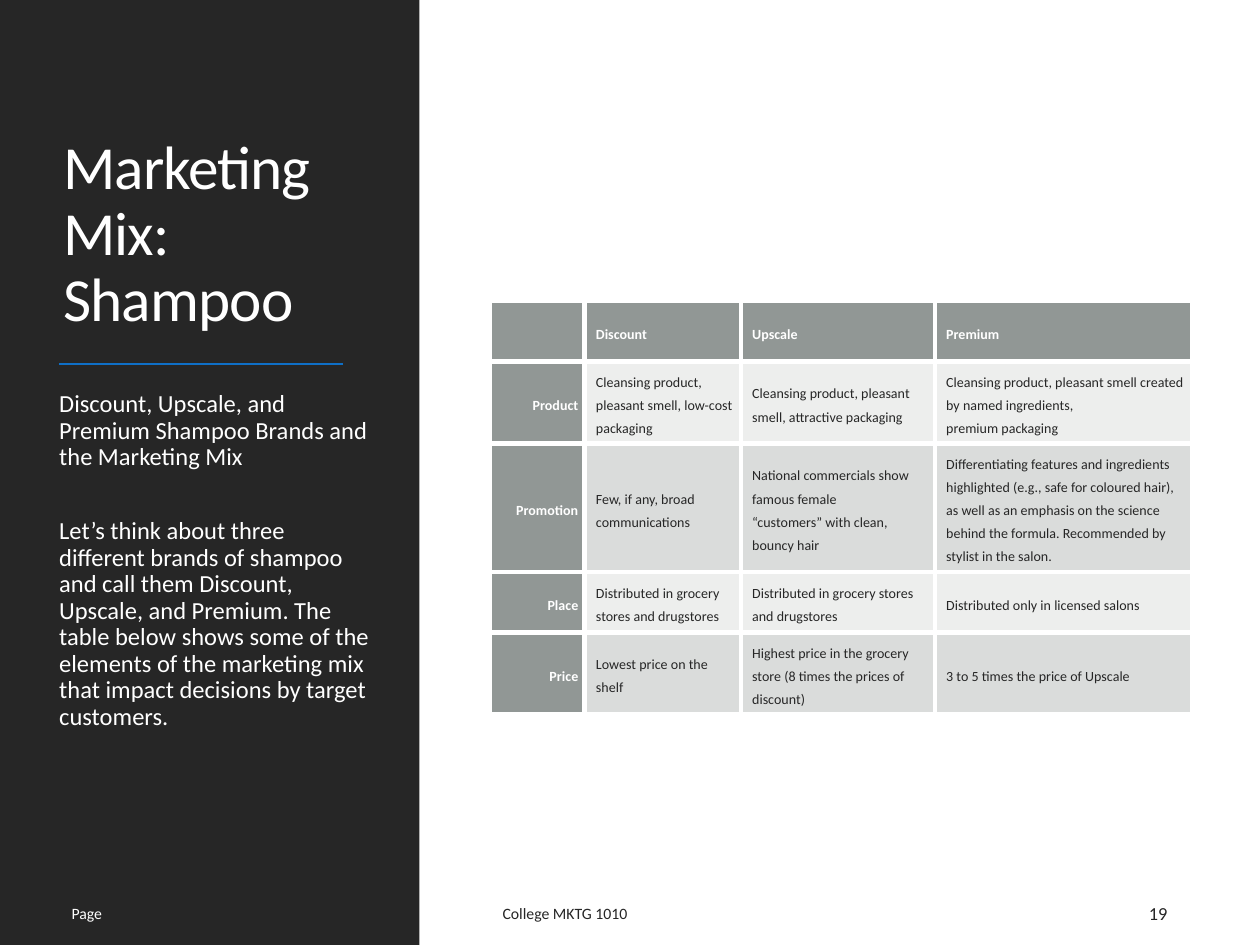
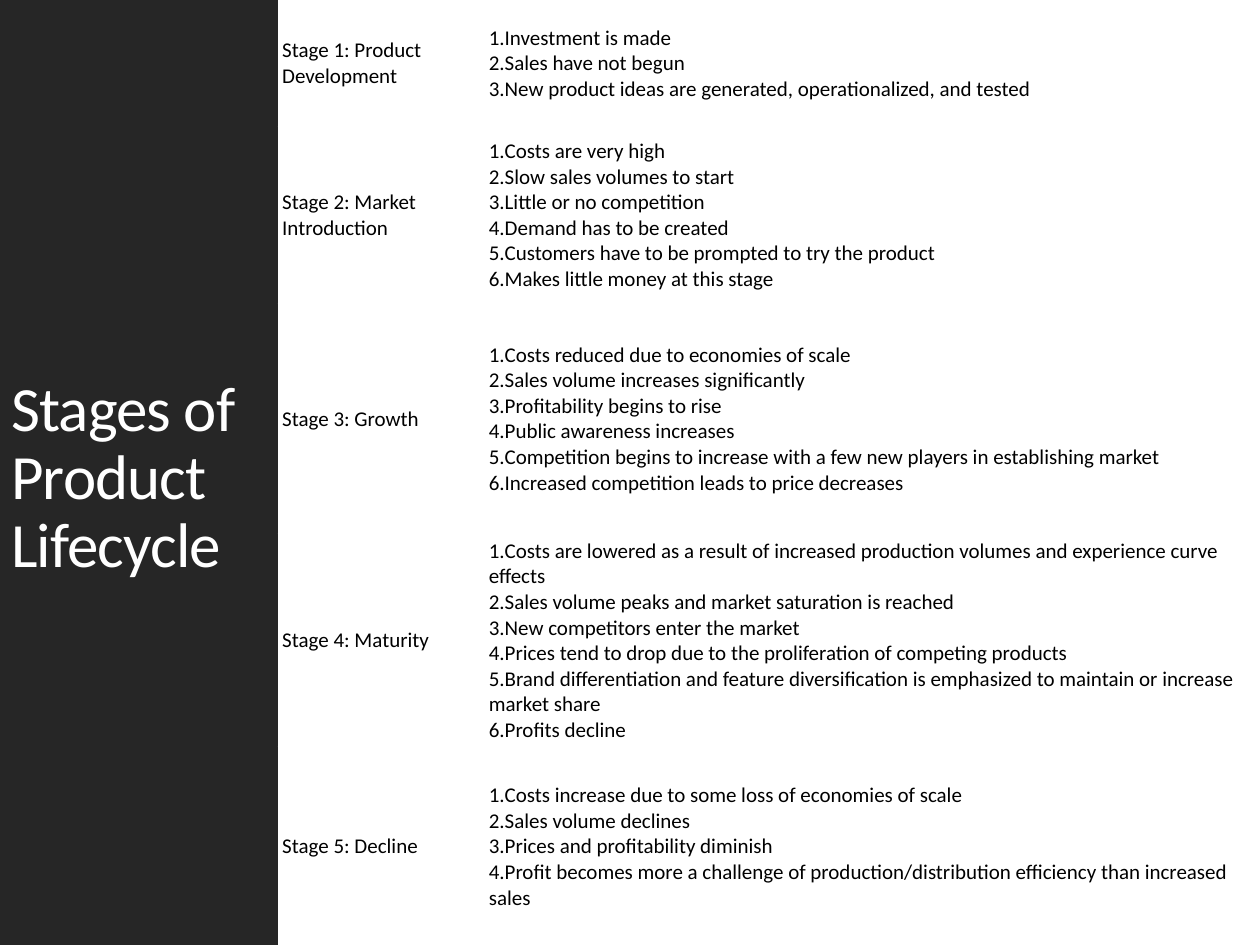
from pptx import Presentation
from pptx.dml.color import RGBColor
from pptx.enum.shapes import MSO_CONNECTOR as CONN, MSO_SHAPE as SHAPE
from pptx.enum.text import MSO_ANCHOR as ANCHOR, MSO_AUTO_SIZE as AUTO, PP_ALIGN as ALIGN
from pptx.oxml import parse_xml
from pptx.oxml.ns import nsdecls, qn
from pptx.util import Inches, Pt

# Shared style
FONT = "Calibri"
DARK, WHITE, BLACK, BLUE = "262626", "FFFFFF", "000000", "0F6FC6"
HEAD, BODY = "636B68", "878E8B"
COLS, ROWS = 100, 75          # layout grid of the slide
NBSP = chr(160)               # written as ~ in the shampoo table

SHAMPOO = [
    ["", "Discount", "Upscale", "Premium"],
    ["Product", "Cleansing product, pleasant smell, low-cost packaging",
     "Cleansing product, pleasant smell, attractive~packaging",
     "Cleansing product, pleasant smell created by named ingredients, premium~packaging"],
    ["Promotion", "Few,~if any, broad communications",
     "National commercials show famous~female “customers”~with clean, bouncy hair",
     "Differentiating features and ingredients highlighted~(e.g., safe for coloured hair), "
     "as well as an emphasis on the science behind the formula. "
     "Recommended by stylist in the salon."],
    ["Place", "Distributed in grocery stores and drugstores",
     "Distributed in grocery stores and drugstores",
     "Distributed only in licensed~salons"],
    ["Price", "Lowest price on the shelf",
     "Highest price in the grocery store (8 times the prices of discount)",
     "3~to 5 times the price of Upscale"],
]

STAGES = [
    ("Stage 1: Product Development", [
        "Investment is made",
        "Sales have not begun",
        "New product ideas are generated, operationalized, and tested"]),
    ("Stage 2: Market Introduction", [
        "Costs are very high",
        "Slow sales volumes to start",
        "Little or no competition",
        "Demand has to be created",
        "Customers have to be prompted to try the product",
        "Makes little money at this stage"]),
    ("Stage 3: Growth", [
        "Costs reduced due to economies of scale",
        "Sales volume increases significantly",
        "Profitability begins to rise",
        "Public awareness increases",
        "Competition begins to increase with a few new players in establishing market",
        "Increased competition leads to price decreases"]),
    ("Stage 4: Maturity", [
        "Costs are lowered as a result of increased production volumes and experience curve effects",
        "Sales volume peaks and market saturation is reached",
        "New competitors enter the market",
        "Prices tend to drop due to the proliferation of competing products",
        "Brand differentiation and feature diversification is emphasized to maintain or "
        "increase market share",
        "Profits decline"]),
    ("Stage 5: Decline", [
        "Costs increase due to some loss of economies of scale",
        "Sales volume declines",
        "Prices and profitability diminish",
        "Profit becomes more a challenge of production/distribution efficiency than "
        "increased sales"]),
]


def rgb(value):
    return RGBColor.from_string(value)


def write(tf, lines, size=12, color=BLACK, bold=False, align=ALIGN.LEFT, spacing=None,
          before=0, after=0, track=None, numbered=False):
    """Fill a text frame with one paragraph per line."""
    for i, line in enumerate([lines] if isinstance(lines, str) else lines):
        p = tf.paragraphs[0] if i == 0 else tf.add_paragraph()
        p.alignment, p.line_spacing = align, spacing
        p.space_before, p.space_after = Pt(before), Pt(after)
        if numbered:
            pPr = p._p.get_or_add_pPr()
            pPr.set("marL", "0")
            pPr.set("indent", "0")
            pPr.append(parse_xml(f'<a:buAutoNum {nsdecls("a")} type="arabicPeriod"/>'))
        r = p.add_run()
        r.text = line
        r.font.name, r.font.size, r.font.bold = FONT, Pt(size), bold
        r.font.color.rgb = rgb(color)
        if track:
            r._r.get_or_add_rPr().set("spc", str(track))


class Deck:
    def __init__(self):
        self.prs = Presentation()
        self.prs.slide_width, self.prs.slide_height = Inches(10), Inches(7.5)
        self.s = None

    def x(self, cols):
        return round(self.prs.slide_width * cols / COLS)

    def y(self, rows):
        return round(self.prs.slide_height * rows / ROWS)

    def box(self, left, top, width, height):
        return self.x(left), self.y(top), self.x(width), self.y(height)

    def slide(self, title, title_box, panel_width, size, anchor):
        """New slide with a dark left panel that carries the title."""
        self.s = self.prs.slides.add_slide(self.prs.slide_layouts[5])
        self.s.background.fill.solid()
        self.s.background.fill.fore_color.rgb = rgb(WHITE)
        panel = self.s.shapes.add_shape(SHAPE.RECTANGLE, *self.box(0, 0, panel_width, ROWS))
        panel.shadow.inherit = False
        panel.fill.solid()
        panel.fill.fore_color.rgb = rgb(DARK)
        panel.line.fill.background()

        sp = self.s.shapes.title
        sp.left, sp.top, sp.width, sp.height = self.box(*title_box)
        tf = sp.text_frame
        tf.word_wrap, tf.auto_size, tf.vertical_anchor = True, AUTO.NONE, anchor
        write(tf, title, size=size, color=WHITE, spacing=0.9, track=-50)
        self.s.shapes._spTree.append(sp._element)   # title above the panel

    def text(self, lines, box, anchor=ANCHOR.TOP, inset=0.1, **fmt):
        tf = self.s.shapes.add_textbox(*self.box(*box)).text_frame
        tf.word_wrap, tf.vertical_anchor = True, anchor
        tf.margin_left = tf.margin_right = Inches(inset)
        write(tf, lines, **fmt)

    def rule(self, left, right, row, color):
        line = self.s.shapes.add_connector(
            CONN.STRAIGHT, self.x(left), self.y(row), self.x(right), self.y(row))
        line.line.color.rgb, line.line.width = rgb(color), Pt(1.5)
        line._element.spPr.append(parse_xml(f'<a:effectLst {nsdecls("a")}/>'))

    def table(self, left, top, widths, heights):
        frame = self.s.shapes.add_table(
            len(heights), len(widths), *self.box(left, top, sum(widths), sum(heights)))
        table = frame.table
        table.first_row = table.horz_banding = False
        for col, width in zip(table.columns, widths):
            col.width = self.x(width)
        for row, height in zip(table.rows, heights):
            row.height = self.y(height)
        return table

    def cell(self, cell, lines, fill, margins, alpha=100, border=0, **fmt):
        cell.vertical_anchor = ANCHOR.MIDDLE
        (cell.margin_left, cell.margin_top,
         cell.margin_right, cell.margin_bottom) = map(Inches, margins)
        tcPr = cell._tc.get_or_add_tcPr()
        if border:
            for side in "LRTB":
                tcPr.append(parse_xml(
                    f'<a:ln{side} {nsdecls("a")} w="{Pt(border)}"><a:solidFill>'
                    f'<a:srgbClr val="{WHITE}"/></a:solidFill></a:ln{side}>'))
        cell.fill.solid()
        cell.fill.fore_color.rgb = rgb(fill)
        if alpha < 100:
            tcPr.find(qn("a:solidFill"))[0].append(
                parse_xml(f'<a:alpha {nsdecls("a")} val="{alpha * 1000}"/>'))
        if lines:
            write(cell.text_frame, lines, **fmt)


def shampoo_slide(deck):
    deck.slide("Marketing Mix: Shampoo", (4, 5.7, 25.3, 21.4), 33.3, 35, ANCHOR.BOTTOM)
    deck.rule(4.7, 27.2, 28.9, BLUE)
    deck.text(["Discount, Upscale, and Premium Shampoo Brands and the Marketing Mix",
               "Let’s think about three different brands of shampoo and call them Discount, "
               "Upscale, and Premium. The table below shows some of the elements of the "
               "marketing mix that impact decisions by target customers."],
              (4.7, 30.6, 24.7, 34.9), inset=0, size=14, color=WHITE, spacing=0.9, after=27)

    # Footer
    for words, left, width, size, color in [("Page", 4.7, 24.7, 9, WHITE),
                                            ("College MKTG 1010", 38.9, 48.7, 9, DARK),
                                            ("19", 90.2, 6.4, 10.5, DARK)]:
        deck.text(words, (left, 70.5, width, 4), ANCHOR.MIDDLE,
                  size=size, color=color, after=6)

    # Marketing mix by brand
    table = deck.table(38.9, 23.9, [7.5, 12.4, 15.4, 20.4], [4.8, 6.5, 10.2, 4.8, 6.5])
    for i, row in enumerate(SHAMPOO):
        for j, words in enumerate(row):
            head = i == 0 or j == 0
            deck.cell(table.cell(i, j), words.replace("~", NBSP),
                      HEAD if head else BODY, (0.09, 0.05, 0.05, 0.05),
                      alpha=70 if head else 15 if i % 2 else 30, border=3,
                      size=8, color=WHITE if head else DARK, bold=head,
                      align=ALIGN.LEFT if j else ALIGN.RIGHT,
                      spacing=Pt(13.2), before=18, after=18)


def lifecycle_slide(deck):
    deck.slide("Stages of Product Lifecycle", (-0.1, 7.6, 23.5, 60.8), 38.1, 36,
               ANCHOR.MIDDLE)
    # Stages and what happens in each
    table = deck.table(22.1, 0, [16.4, 59.9], [10.1, 14, 18.3, 16.9, 15.8])
    for i, stage in enumerate(STAGES):
        for j, lines in enumerate(stage):
            deck.cell(table.cell(i, j), lines, WHITE, (0.03, 0.01, 0.03, 0.01),
                      numbered=j == 1)


def main():
    deck = Deck()
    shampoo_slide(deck)
    lifecycle_slide(deck)
    deck.prs.save("out.pptx")


if __name__ == "__main__":
    main()
